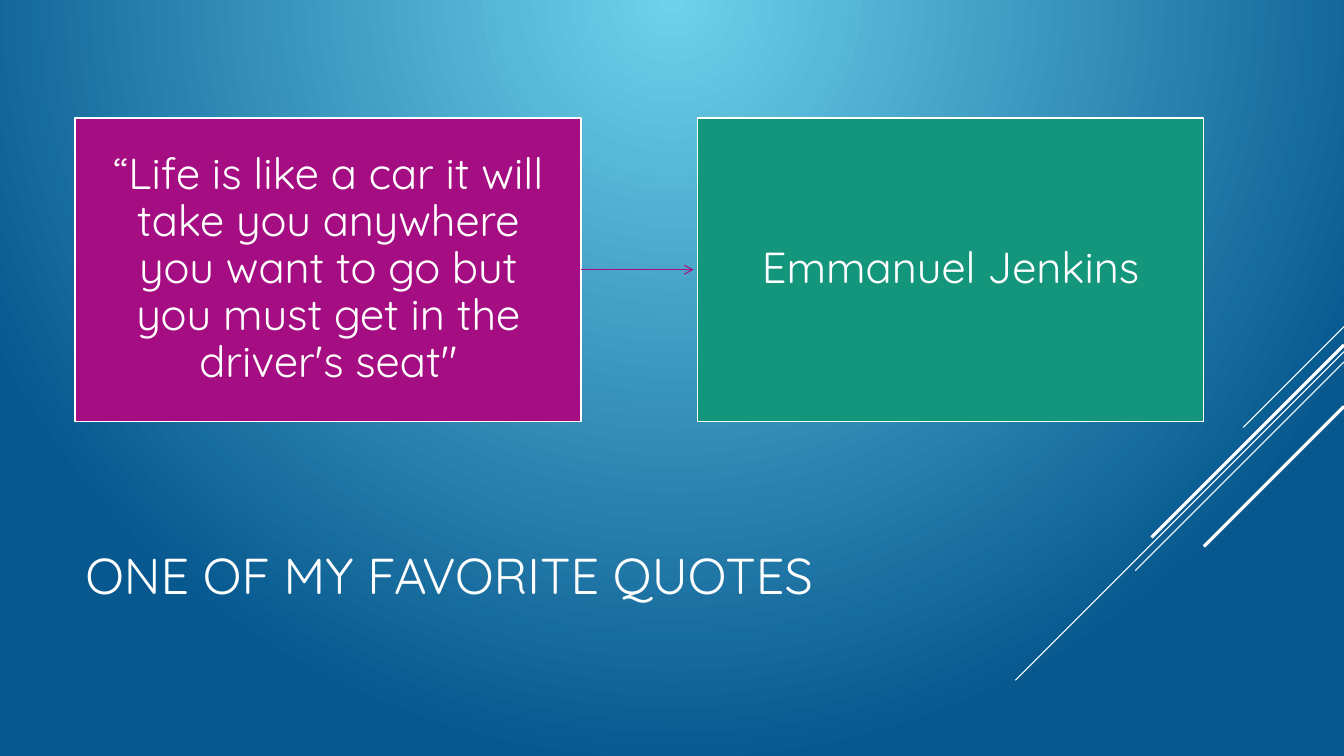
from dataclasses import dataclass

from lxml import etree
from pptx import Presentation
from pptx.dml.color import RGBColor
from pptx.enum.shapes import MSO_CONNECTOR, MSO_SHAPE
from pptx.enum.text import MSO_ANCHOR, PP_ALIGN
from pptx.oxml.ns import qn
from pptx.util import Cm, Pt

STRAIGHT = MSO_CONNECTOR.STRAIGHT
RECTANGLE = MSO_SHAPE.RECTANGLE
MIDDLE = MSO_ANCHOR.MIDDLE
LEFT, CENTER = PP_ALIGN.LEFT, PP_ALIGN.CENTER
RIGHT_SIDE = 3


@dataclass(frozen=True)
class Theme:
    font: str = "Quicksand"
    glow: RGBColor = RGBColor(0x6E, 0xD2, 0xEB)
    deep_blue: RGBColor = RGBColor(0x06, 0x58, 0x8E)
    white: RGBColor = RGBColor(0xFF, 0xFF, 0xFF)
    magenta: RGBColor = RGBColor(0xA5, 0x0E, 0x82)
    green: RGBColor = RGBColor(0x14, 0x96, 0x7C)
    title_size: Pt = Pt(36)
    card_size: Pt = Pt(31)
    thin: Pt = Pt(0.75)
    outline: Pt = Pt(1.25)
    thick: Pt = Pt(2.25)


THEME = Theme()

SLIDE_WIDTH, SLIDE_HEIGHT = 33.87, 19.05
MARGIN = 1.9
CARD_TOP, CARD_WIDTH, CARD_HEIGHT = 2.97, 12.75, 7.65
CARD_PITCH = 15.68
ARROW_GAP = 0.1

# Height on the right edge, horizontal reach, line width
STRIPES = [
    (8.23, 2.54, THEME.thin),
    (8.86, 8.28, THEME.thin),
    (9.12, 5.26, THEME.thin),
    (8.69, 4.85, THEME.thick),
    (10.24, 3.53, THEME.thick),
]


def paint_background(slide):
    """Radial gradient that glows from the middle of the top edge."""
    fill = slide.background.fill
    fill.gradient()
    for stop, color in zip(fill.gradient_stops, (THEME.glow, THEME.deep_blue)):
        stop.color.rgb = color
    gradient = next(slide.element.iter(qn("a:gradFill")))
    gradient.remove(gradient.find(qn("a:lin")))
    circle = etree.SubElement(gradient, qn("a:path"), path="circle")
    etree.SubElement(circle, qn("a:fillToRect"), l="0", t="0", r="0", b="100000")


def add_line(slide, start, end, color, width):
    line = slide.shapes.add_connector(STRAIGHT, *map(Cm, start + end))
    line.line.color.rgb = color
    line.line.width = width
    etree.SubElement(line.element.spPr, qn("a:effectLst"))
    return line


def write(shape, text, size, align):
    frame = shape.text_frame
    frame.word_wrap = True
    frame.vertical_anchor = MIDDLE
    frame.text = text
    paragraph = frame.paragraphs[0]
    paragraph.alignment = align
    paragraph.line_spacing = 0.9
    font = paragraph.runs[0].font
    font.name = THEME.font
    font.size = size
    font.color.rgb = THEME.white


def add_card(slide, column, text, color):
    card = slide.shapes.add_shape(
        RECTANGLE, Cm(MARGIN + column * CARD_PITCH), Cm(CARD_TOP),
        Cm(CARD_WIDTH), Cm(CARD_HEIGHT))
    card.shadow.inherit = False
    card.fill.solid()
    card.fill.fore_color.rgb = color
    card.line.color.rgb = THEME.white
    card.line.width = THEME.outline
    write(card, text, THEME.card_size, CENTER)
    frame = card.text_frame
    frame.margin_left = frame.margin_right = Cm(0.64)
    frame.margin_top = frame.margin_bottom = Cm(0.66)
    return card


def add_arrow(slide, quote):
    """Arrow from the quote that stops just short of its author."""
    middle = CARD_TOP + CARD_HEIGHT / 2
    arrow = add_line(slide, (MARGIN + CARD_WIDTH, middle),
                     (MARGIN + CARD_PITCH - ARROW_GAP, middle),
                     THEME.magenta, THEME.thin)
    arrow.begin_connect(quote, RIGHT_SIDE)
    etree.SubElement(arrow.line._get_or_add_ln(), qn("a:tailEnd"), type="arrow")


def add_title(slide, text):
    title = slide.shapes.add_textbox(Cm(MARGIN), Cm(12.47), Cm(23.7), Cm(4.19))
    write(title, text, THEME.title_size, LEFT)


def main():
    deck = Presentation()
    deck.slide_width, deck.slide_height = Cm(SLIDE_WIDTH), Cm(SLIDE_HEIGHT)
    slide = deck.slides.add_slide(deck.slide_layouts[6])

    paint_background(slide)
    for top, reach, width in STRIPES:
        add_line(slide, (SLIDE_WIDTH, top), (SLIDE_WIDTH - reach, top + reach),
                 THEME.white, width)
    add_title(slide, "ONE OF MY FAVORITE QUOTES")
    quote = add_card(
        slide, 0,
        "“Life is like a car it will take you anywhere you want to go "
        "but you must get in the driver's seat\"",
        THEME.magenta)
    add_card(slide, 1, "Emmanuel Jenkins", THEME.green)
    add_arrow(slide, quote)

    deck.save("out.pptx")


if __name__ == "__main__":
    main()
